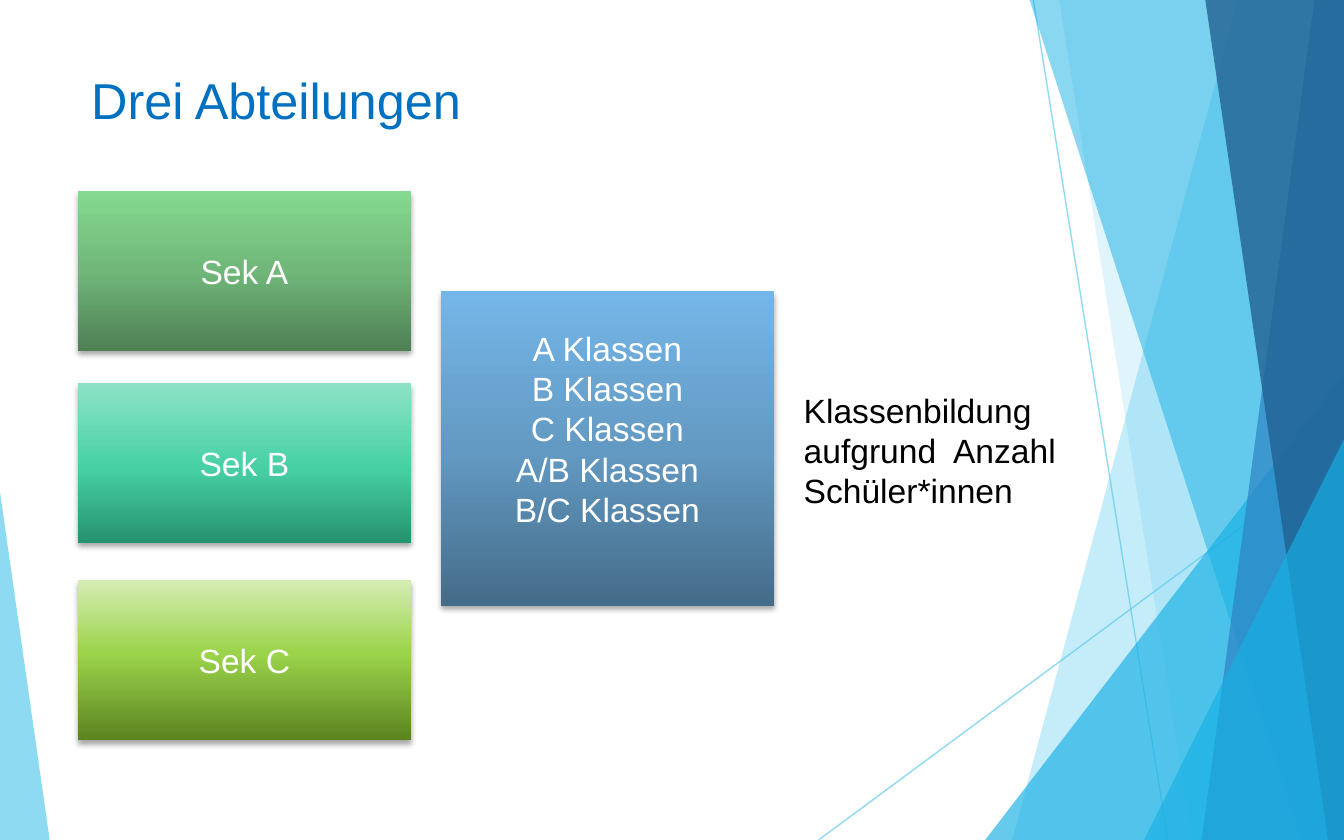
from pptx import Presentation
from pptx import util as u
from pptx.dml.color import RGBColor
from pptx.enum import shapes, text
from pptx.oxml import parse_xml
from pptx.oxml.ns import nsdecls, qn

HUES = {
    "title": "0070C0", "light": "FFFFFF", "dark": "000000",
    "sky": "5FCBEF", "cyan": "17B0E4", "blue": "2E83C3", "navy": "226292",
}
FADES = {
    "A": (270, [(0, "4F8055"), (50, "70B779"), (100, "85D990")]),
    "B": (270, [(0, "25936F"), (48, "48D1A5"), (100, "8EE3C7")]),
    "C": (90, [(0, "D5EDB3"), (46, "9BD34A"), (100, "5B8420")]),
    "class": (270, [(0, "456C89"), (50, "639AC3"), (100, "75B6E8")]),
}
WIDE, HIGH = 25.4, 15.88


def place(box):
    """Turn a box in centimetres into lengths."""
    return [u.Cm(side) for side in box]


def fade_in(color, alpha):
    """Make a solid color see-through, alpha in percent."""
    color.append(parse_xml(f'<a:alpha {nsdecls("a")} val="{alpha * 1000}"/>'))


def tint(shape, hue, alpha):
    """Fill a shape with a see-through hue and no outline."""
    shape.shadow.inherit = False
    shape.line.fill.background()
    shape.fill.solid()
    shape.fill.fore_color.rgb = RGBColor.from_string(HUES[hue])
    fade_in(shape._element.spPr.find(qn("a:solidFill"))[0], alpha)


def write(frame, lines, size, hue, align=None):
    """Write one paragraph per line."""
    frame.text = "\n".join(lines)
    for para in frame.paragraphs:
        para.alignment = align
        para.font.name = "Arial"
        para.font.size = u.Pt(size)
        para.font.color.rgb = RGBColor.from_string(HUES[hue])


def add_ray(slide, start, end):
    """Draw a thin see-through line."""
    ray = slide.shapes.add_connector(shapes.MSO_CONNECTOR.STRAIGHT, *place(start + end))
    ray.line.width = u.Pt(0.75)
    ray.line.color.rgb = RGBColor.from_string(HUES["sky"])
    props = ray._element.spPr
    fade_in(props.find(qn("a:ln")).find(qn("a:solidFill"))[0], 70)
    props.append(parse_xml(f'<a:effectLst {nsdecls("a")}/>'))


def add_band(slide, box, head, foot, hue, alpha):
    """Draw a band from a slanted left side to the right side of the box."""
    left, top, width, height = box
    right, base = left + width, top + height
    points = [(left + head, top), (right, top), (right, base), (left + foot, base)]
    points = [place(point) for point in points]
    band = slide.shapes.build_freeform(*points[0])
    band.add_line_segments(points[1:])
    tint(band.convert_to_shape(), hue, alpha)


def add_wedge(slide, box, peak, hue, alpha):
    """Draw a triangle with its peak at a share of its width."""
    wedge = slide.shapes.add_shape(shapes.MSO_SHAPE.ISOSCELES_TRIANGLE, *place(box))
    wedge.adjustments[0] = peak
    tint(wedge, hue, alpha)


def add_facets(slide, box):
    """Draw the layered facets along the right side."""
    left, top, width, height = box
    right, base = left + width, top + height

    def corner(x, y, hue, alpha):
        """Draw a wedge that fills the lower right corner."""
        add_wedge(slide, (left + x, top + y, width - x, height - y), 1, hue, alpha)

    add_ray(slide, (left + 4.06, top), (left + 6.6, base))
    add_ray(slide, (right, top + 8.53), (left, base))
    add_band(slide, box, 7.92, 3.66, "sky", 36)
    add_band(slide, box, 4.55, 7.06, "sky", 20)
    corner(3.15, 7.06, "cyan", 66)
    add_band(slide, box, 3.99, 9.12, "cyan", 50)
    add_band(slide, box, 9.37, 7.24, "blue", 70)
    add_band(slide, box, 7.31, 9.63, "navy", 80)
    corner(6.15, 8.31, "cyan", 66)


def add_title(slide, box, words):
    """Move and format the title."""
    title = slide.shapes.title
    title.left, title.top, title.width, title.height = place(box)
    frame = title.text_frame
    frame.auto_size = text.MSO_AUTO_SIZE.NONE
    frame.vertical_anchor = text.MSO_ANCHOR.MIDDLE
    write(frame, [words], 27, "title", text.PP_ALIGN.LEFT)


def add_card(slide, box, lines, fade):
    """Draw a shaded card with centred text."""
    card = slide.shapes.add_shape(shapes.MSO_SHAPE.RECTANGLE, *place(box))
    angle, stops = FADES[fade]
    marks = "".join(
        f'<a:gs pos="{spot * 1000}"><a:srgbClr val="{hue}"/></a:gs>' for spot, hue in stops
    )
    props = card._element.spPr
    props.append(parse_xml(
        f'<a:gradFill {nsdecls("a")} rotWithShape="1"><a:gsLst>{marks}</a:gsLst>'
        f'<a:lin ang="{angle * 60000}" scaled="0"/></a:gradFill>'
    ))
    card.line.fill.background()
    props.append(parse_xml(
        f'<a:effectLst {nsdecls("a")}><a:outerShdw blurRad="{u.Pt(3)}" dist="{u.Pt(2)}" '
        f'dir="5400000" rotWithShape="0"><a:srgbClr val="{HUES["dark"]}">'
        '<a:alpha val="35000"/></a:srgbClr></a:outerShdw></a:effectLst>'
    ))
    frame = card.text_frame
    frame.vertical_anchor = text.MSO_ANCHOR.MIDDLE
    write(frame, lines, 18, "light", text.PP_ALIGN.CENTER)
    return card


def add_levels(slide, box):
    """Stack the three department cards."""
    left, top, width, height = box
    for name, drop in zip("ABC", (0, 3.63, 7.36)):
        add_card(slide, (left, top + drop, width, height - 7.36), [f"Sek {name}"], name)


def add_groups(slide, box):
    """Draw the card with the class types, its text set a little high."""
    names = ["A", "B", "C", "A/B", "B/C"]
    card = add_card(slide, box, [f"{name} Klassen" for name in names], "class")
    card.text_frame.margin_bottom = u.Cm(0.89)


def add_note(slide, box):
    """Write the note on how classes are formed."""
    frame = slide.shapes.add_textbox(*place(box)).text_frame
    frame.word_wrap = True
    frame.auto_size = text.MSO_AUTO_SIZE.SHAPE_TO_FIT_TEXT
    write(frame, ["Klassenbildung", "aufgrund  Anzahl", "Schüler*innen"], 18, "dark")


def main():
    """Build the slide and save it."""
    deck = Presentation()
    deck.slide_width, deck.slide_height = place((WIDE, HIGH))
    slide = deck.slides.add_slide(deck.slide_layouts.get_by_name("Title Only"))
    add_facets(slide, (15.47, 0, 9.93, HIGH))
    add_wedge(slide, (0, 9.3, 0.94, 6.58), 0, "sky", 70)
    add_title(slide, (1.47, 1.12, 8.31, 1.52), "Drei Abteilungen")
    add_levels(slide, (1.47, 3.61, 6.3, 10.38))
    add_note(slide, (14.94, 7.24, 7.92, 2.57))
    add_groups(slide, (8.33, 5.51, 6.3, 5.94))
    deck.save("out.pptx")


if __name__ == "__main__":
    main()
